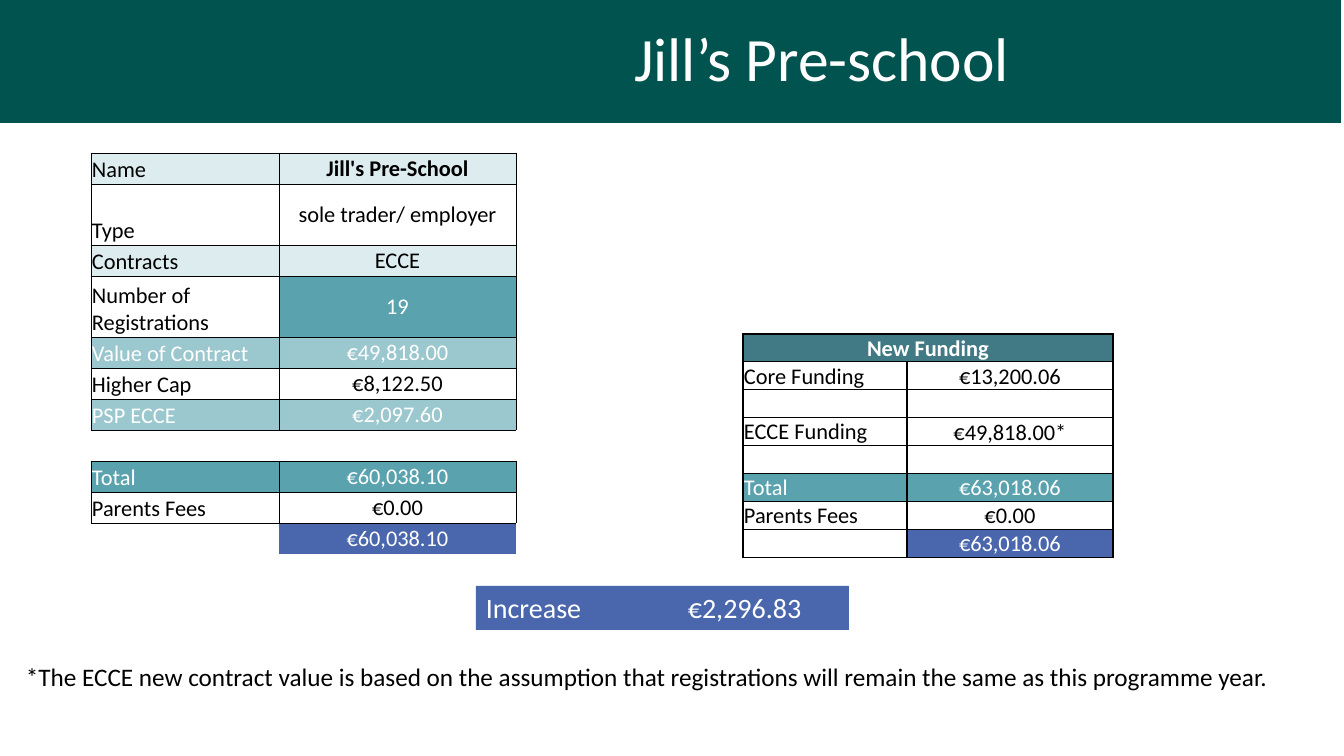
from lxml.etree import SubElement
from pptx import Presentation
from pptx.dml.color import RGBColor
from pptx.enum.shapes import MSO_SHAPE
from pptx.enum.text import MSO_ANCHOR as ANCHOR, PP_ALIGN as ALIGN
from pptx.oxml.ns import qn
from pptx.util import Emu, Pt

PX_PER_INCH = 100.8
COLORS = {
    "black": "000000", "white": "FFFFFF", "green": "00534F", "pale": "DDECEE",
    "light": "9BC7CE", "teal": "5AA2AE", "dark": "417A85", "blue": "4A66AC",
}
DARK_FILLS = ("light", "teal", "dark", "blue")
ALL_SIDES = "LRTB"

CURRENT_FUNDING = [
    ("Name", "Jill's Pre-School", "pale", "pale"),
    ("Type", "sole trader/ employer", None, None),
    ("Contracts", "ECCE", "pale", "pale"),
    ("Number of Registrations", "19", None, "teal"),
    ("Value of Contract", "€49,818.00", "light", "light"),
    ("Higher Cap", "€8,122.50", None, None),
    ("PSP ECCE", "€2,097.60", "light", "light"),
    ("", "", None, None),
    ("Total", "€60,038.10", "teal", "teal"),
    ("Parents Fees", "€0.00", None, None),
    ("", "€60,038.10", None, "blue"),
]
NEW_FUNDING = [
    ("New Funding", "", "dark", "dark"),
    ("Core Funding", "€13,200.06", None, None),
    ("", "", None, None),
    ("ECCE Funding", "€49,818.00*", None, None),
    ("", "", None, None),
    ("Total", "€63,018.06", "teal", "teal"),
    ("Parents Fees", "€0.00", None, None),
    ("", "€63,018.06", None, "blue"),
]


def px(length):
    """Turn a length in px into EMU."""
    return Emu(round(length * 914400 / PX_PER_INCH))


def box(*lengths):
    """Turn left, top, width and height into EMU."""
    return [px(length) for length in lengths]


def rgb(name):
    """Look up a named colour."""
    return RGBColor.from_string(COLORS[name])


def style_text(paragraph, size, color, align=ALIGN.LEFT, bold=False):
    """Set the font and alignment of a paragraph."""
    paragraph.alignment = align
    font = paragraph.font
    font.name, font.size, font.bold = "Calibri", Pt(size), bold
    font.color.rgb = rgb(color)


def add_rectangle(slide, bounds, fill):
    """Add a plain filled rectangle."""
    shape = slide.shapes.add_shape(MSO_SHAPE.RECTANGLE, *box(*bounds))
    shape.shadow.inherit = False
    shape.fill.solid()
    shape.fill.fore_color.rgb = rgb(fill)
    shape.line.fill.background()
    return shape


def add_title(slide, text, bounds):
    """Fill and place the title band."""
    title = slide.shapes.title
    title.left, title.top, title.width, title.height = box(*bounds)
    title.fill.solid()
    title.fill.fore_color.rgb = rgb("green")
    title.text_frame.text = text
    title.text_frame.vertical_anchor = ANCHOR.MIDDLE
    paragraph = title.text_frame.paragraphs[0]
    paragraph.line_spacing = 0.9
    style_text(paragraph, 44, "white", ALIGN.CENTER)


def add_note(slide, text, bounds):
    """Add the footnote text box."""
    frame = slide.shapes.add_textbox(*box(*bounds)).text_frame
    frame.word_wrap = True
    frame.text = text
    style_text(frame.paragraphs[0], 18, "black")


def add_increase(slide, text, bounds):
    """Add the bar with the increase in funding."""
    frame = add_rectangle(slide, bounds, "blue").text_frame
    frame.vertical_anchor = ANCHOR.TOP
    frame.text = text
    paragraph = frame.paragraphs[0]
    tabs = SubElement(paragraph._p.get_or_add_pPr(), qn("a:tabLst"))
    SubElement(tabs, qn("a:tab"), pos=str(px(202)), algn="l")
    style_text(paragraph, 20, "white")


def set_borders(cell, sides, width):
    """Draw black borders on the given sides and none on the others."""
    properties = cell._tc.get_or_add_tcPr()
    for side in ALL_SIDES:
        line = SubElement(properties, qn(f"a:ln{side}"), w=str(Pt(width)))
        if side in sides:
            fill = SubElement(line, qn("a:solidFill"))
            SubElement(fill, qn("a:srgbClr"), val=COLORS["black"])
        else:
            SubElement(line, qn("a:noFill"))


def format_cell(cell, text, fill, is_label, bold):
    """Set the text, fill and margins of a cell."""
    cell.margin_left = cell.margin_top = cell.margin_right = px(1)
    cell.margin_bottom = 0
    cell.vertical_anchor = ANCHOR.BOTTOM if is_label else ANCHOR.MIDDLE
    if fill:
        cell.fill.solid()
        cell.fill.fore_color.rgb = rgb(fill)
    else:
        cell.fill.background()
    cell.text = text
    paragraph = cell.text_frame.paragraphs[0]
    color = "white" if fill in DARK_FILLS else "black"
    style_text(paragraph, 16, color, ALIGN.LEFT if is_label else ALIGN.CENTER, bold)
    if not text:
        SubElement(paragraph._p, qn("a:endParaRPr"), sz="1600")


def add_funding_table(slide, rows, position, widths, heights, border, open_rows=None):
    """Add a two-column table of labels and amounts."""
    bounds = box(*position, sum(widths), sum(heights))
    table = slide.shapes.add_table(len(rows), 2, *bounds).table
    table.first_row = table.horz_banding = False
    for column, width in zip(table.columns, widths):
        column.width = px(width)
    for index, (label, value, *fills) in enumerate(rows):
        table.rows[index].height = px(heights[index])
        sides = (open_rows or {}).get(index, ALL_SIDES)
        for column, text in enumerate((label, value)):
            cell = table.cell(index, column)
            heading = text in ("Jill's Pre-School", "New Funding")
            set_borders(cell, sides, border)
            format_cell(cell, text, fills[column], column == 0 and not heading, heading)
    return table


def main():
    """Build the slide and save it."""
    presentation = Presentation()
    presentation.slide_width, presentation.slide_height = px(1344), px(756)
    slide = presentation.slides.add_slide(presentation.slide_layouts[5])
    add_rectangle(slide, (0, 0, 306, 123), "green")
    add_title(slide, "Jill’s Pre-school", (303, 0, 1038, 123))
    add_note(
        slide,
        "*The ECCE new contract value is based on the assumption that "
        "registrations will remain the same as this programme year.",
        (16, 656, 1292, 40),
    )
    heights = [61 if row[0] in ("Type", "Number of Registrations") else 31
               for row in CURRENT_FUNDING]
    add_funding_table(slide, CURRENT_FUNDING, (91, 153), (188, 237), heights, 0.5,
                      {7: "TB", 10: "T"})
    new_table = add_funding_table(slide, NEW_FUNDING, (743, 334), (164, 206),
                                  [27] * len(NEW_FUNDING), 1)
    new_table.cell(0, 0).merge(new_table.cell(0, 1))
    add_increase(slide, "Increase \t€2,296.83", (476, 586, 373, 44))
    presentation.save("out.pptx")


if __name__ == "__main__":
    main()
